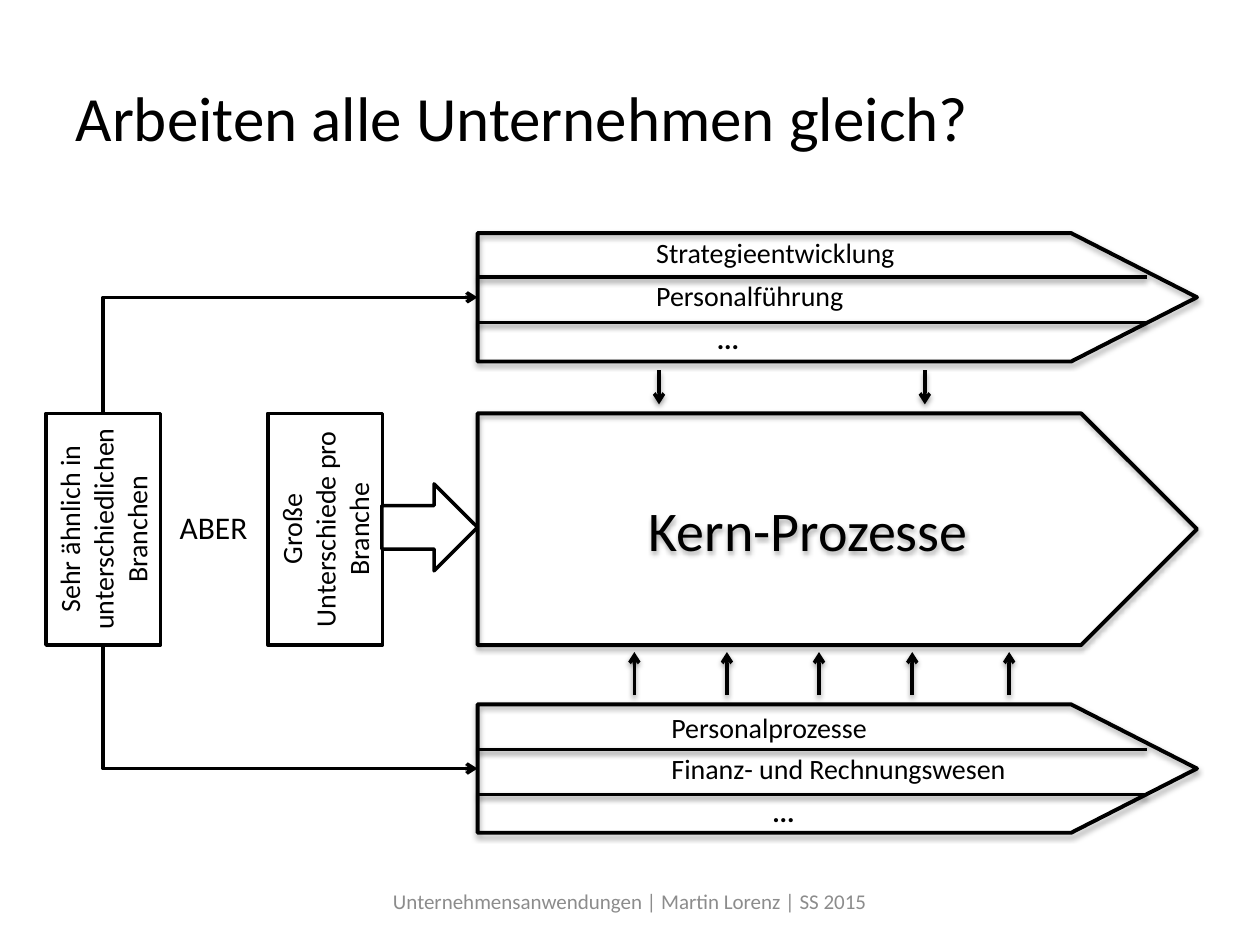
import pptx
import pptx.util
import pptx.dml.color
import pptx.enum.shapes
import pptx.enum.text
import pptx.oxml
import pptx.oxml.ns

Pt = pptx.util.Pt
SHAPE = pptx.enum.shapes.MSO_SHAPE
CONNECTOR = pptx.enum.shapes.MSO_CONNECTOR
ALIGN = pptx.enum.text.PP_ALIGN
ANCHOR = pptx.enum.text.MSO_ANCHOR
AUTO_SIZE = pptx.enum.text.MSO_AUTO_SIZE
COLORS = {"ink": "000000", "paper": "FFFFFF", "footer": "8C8C8C"}
RGB = {name: pptx.dml.color.RGBColor.from_string(value) for name, value in COLORS.items()}


def write(shape, paragraphs, size, align=ALIGN.LEFT, anchor=ANCHOR.TOP, wrap=True,
          color="ink", bold=False):
    frame = shape.text_frame
    frame.word_wrap = wrap
    frame.vertical_anchor = anchor
    for i, text in enumerate(paragraphs):
        paragraph = frame.add_paragraph() if i else frame.paragraphs[0]
        paragraph.alignment = align
        run = paragraph.add_run()
        run.text = text
        run.font.name = "Calibri"
        run.font.size = Pt(size)
        run.font.bold = bold
        run.font.color.rgb = RGB[color]


def outline(shape, width=2, shadow=0, arrow_at=None):
    """Black line with an optional arrowhead; shadow is its opacity in percent."""
    shape.line.color.rgb = RGB["ink"]
    shape.line.width = Pt(width)
    line = shape.line._get_or_add_ln()
    if arrow_at:
        line.append(pptx.oxml.parse_xml(
            f'<a:{arrow_at} {pptx.oxml.ns.nsdecls("a")} type="arrow"/>'))
    effect = (f'<a:outerShdw blurRad="{Pt(3.1)}" dist="{Pt(1.7)}" dir="5400000" rotWithShape="0">'
              f'<a:srgbClr val="{COLORS["ink"]}"><a:alpha val="{shadow * 1000}"/></a:srgbClr>'
              '</a:outerShdw>') if shadow else ""
    line.addnext(pptx.oxml.parse_xml(
        f'<a:effectLst {pptx.oxml.ns.nsdecls("a")}>{effect}</a:effectLst>'))


deck = pptx.Presentation()
deck.slide_width, deck.slide_height = Pt(720), Pt(540)
slide = deck.slides.add_slide(deck.slide_layouts[5])
shapes = slide.shapes

title = shapes.title
title.left, title.top, title.width, title.height = Pt(36), Pt(21.6), Pt(648), Pt(90)
write(title, ["Arbeiten alle Unternehmen gleich?"], 36, anchor=ANCHOR.MIDDLE)

# Process plates
plate_left, plate_width = 272.9, 411.1
core_top, core_height = 236.2, 132.4
support_height = 73.4
management_top, support_top = 133.2, 402.5
for top, height, point, label in [
    (core_top, core_height, 0.5, ["Kern-Prozesse"]),
    (support_top, support_height, 0.98, []),
    (management_top, support_height, 0.98, []),
]:
    plate = shapes.add_shape(SHAPE.PENTAGON, Pt(plate_left), Pt(top), Pt(plate_width), Pt(height))
    plate.adjustments[0] = point
    plate.fill.background()
    outline(plate, 2.25, shadow=35)
    write(plate, label, 32, ALIGN.CENTER, ANCHOR.MIDDLE)

# Rows inside the outer plates
for text, left, top, width in [
    ("Strategieentwicklung", 367.9, 131, 152.6),
    ("Personalführung", 367.9, 155.8, 123.1),
    ("...", 402.5, 180, 27.4),
    ("Personalprozesse", 376.6, 402.5, 127.4),
    ("Finanz- und Rechnungswesen", 376.6, 426.2, 208.1),
    ("...", 434.2, 450.7, 27.4),
]:
    row = shapes.add_textbox(Pt(left), Pt(top), Pt(width), Pt(26.6))
    write(row, [text], 16, wrap=False, bold=text == "...")
    row.text_frame.auto_size = AUTO_SIZE.SHAPE_TO_FIT_TEXT

# Row separators, then the arrows towards the core
separators = [(plate_left, y, 655.2, y, None) for y in (158.4, 184.3, 428.4, 454)]
upward = [(x, 397.2, x, 372.6, "tailEnd") for x in (362.5, 415.4, 468, 521.3, 576.7)]
downward = [(x, 211.7, x, 231.1, "tailEnd") for x in (376.6, 528.5)]
for x1, y1, x2, y2, arrow_at in separators + upward + downward:
    link = shapes.add_connector(CONNECTOR.STRAIGHT, Pt(x1), Pt(y1), Pt(x2), Pt(y2))
    outline(link, shadow=38, arrow_at=arrow_at)

# Upright remarks on the left
remark_width, remark_height = core_height, 65.5
similar_center, different_center = 59, 185.8
for center, paragraphs in [
    (similar_center, ["Sehr ähnlich in", "unterschiedlichen Branchen"]),
    (different_center, ["Große Unterschiede pro Branche"]),
]:
    remark = shapes.add_shape(
        SHAPE.RECTANGLE, Pt(center - remark_width / 2),
        Pt(core_top + (core_height - remark_height) / 2), Pt(remark_width), Pt(remark_height))
    remark.rotation = 270
    remark.fill.solid()
    remark.fill.fore_color.rgb = RGB["paper"]
    outline(remark)
    write(remark, paragraphs, 16, ALIGN.CENTER)
    remark.text_frame.auto_size = AUTO_SIZE.SHAPE_TO_FIT_TEXT

# Elbows run horizontally from the plate, so the arrowhead sits at their start
for plate_top, remark_edge in [(management_top, core_top),
                               (support_top, core_top + core_height)]:
    elbow = shapes.add_connector(
        CONNECTOR.ELBOW, Pt(plate_left), Pt(plate_top + support_height / 2),
        Pt(similar_center), Pt(remark_edge))
    elbow._element.spPr.find(pptx.oxml.ns.qn("a:prstGeom")).set("prst", "bentConnector2")
    outline(elbow, arrow_at="headEnd")

contrast = shapes.add_textbox(Pt(91.4), Pt(286.6), Pt(61.2), Pt(28.8))
write(contrast, ["ABER"], 18, ALIGN.CENTER)

core_arrow = shapes.add_shape(SHAPE.RIGHT_ARROW, Pt(218.2), Pt(276.5), Pt(54.7), Pt(49.7))
core_arrow.fill.solid()
core_arrow.fill.fore_color.rgb = RGB["paper"]
outline(core_arrow)

footer = shapes.add_textbox(Pt(54), Pt(500.4), Pt(612), Pt(28.8))
write(footer, ["Unternehmensanwendungen | Martin Lorenz | SS 2015"], 12,
      ALIGN.CENTER, ANCHOR.MIDDLE, color="footer")

deck.save("out.pptx")
